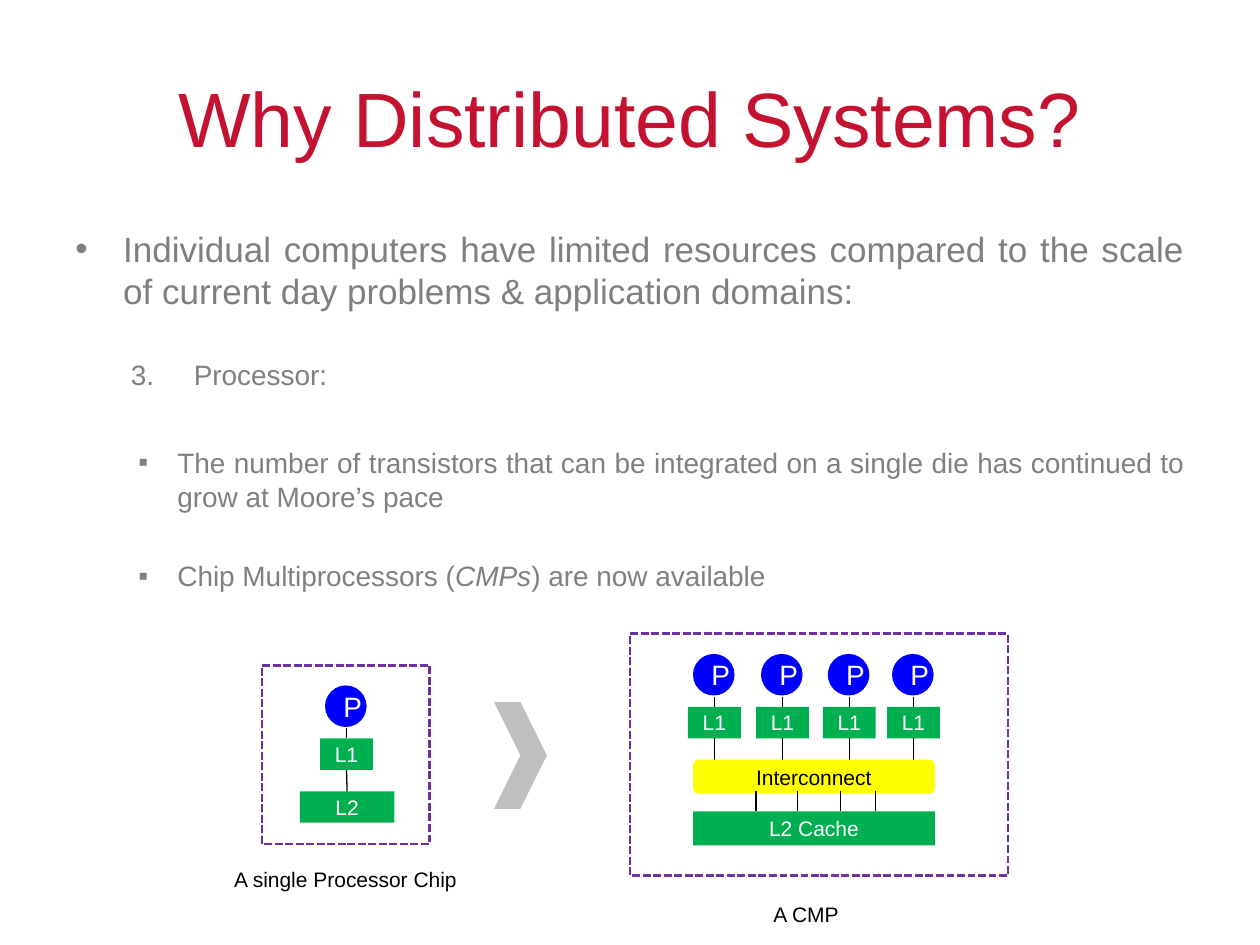
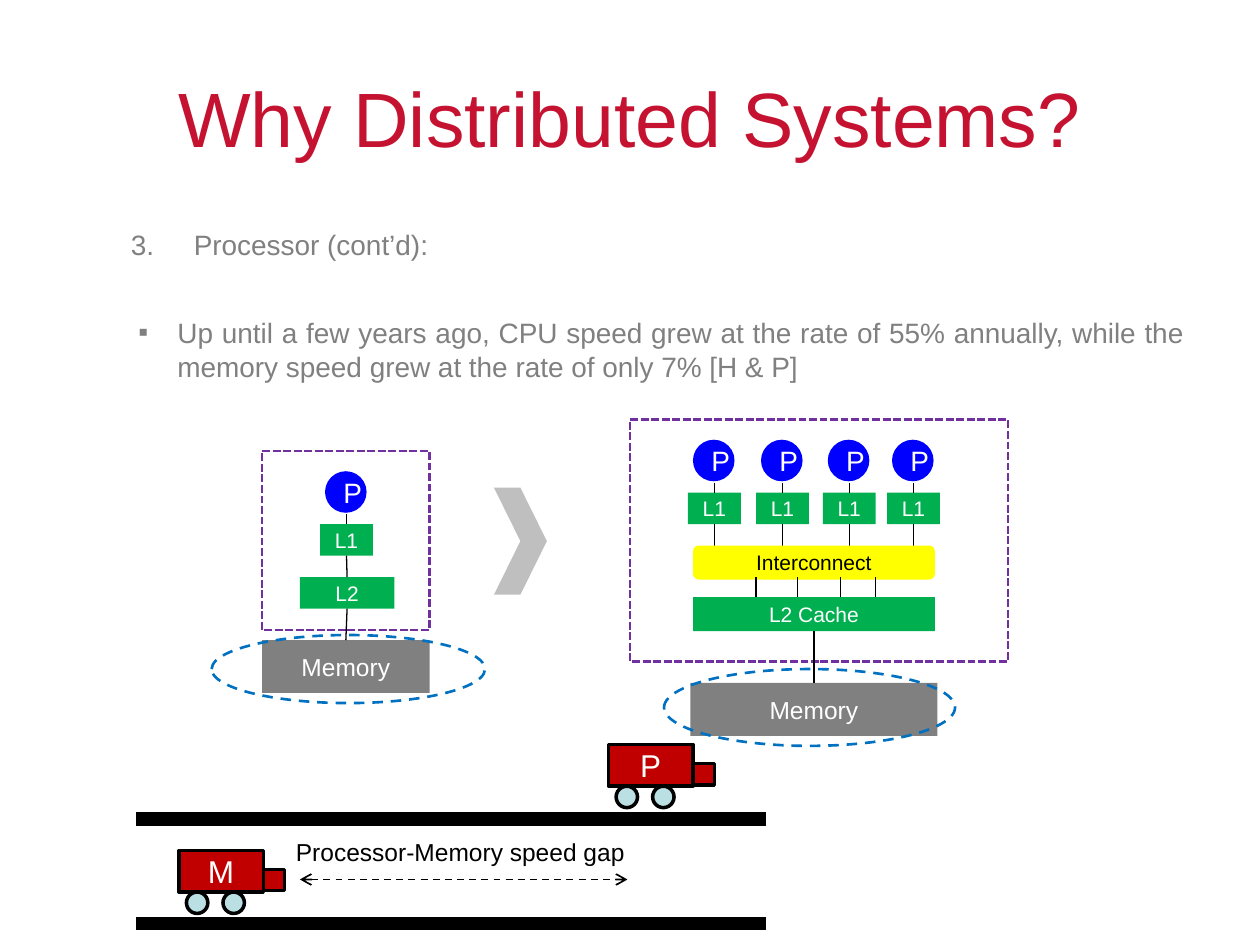
import lxml.etree
import pptx
import pptx.dml.color
import pptx.enum.dml
import pptx.enum.shapes
import pptx.enum.text
import pptx.oxml.ns
import pptx.util

PX = 9144
FACE = "Arial"
INK = {
    "title": "C41230", "body": "7F7F7F", "step": "808080", "black": "000000",
    "white": "FFFFFF", "chip": "7030A0", "core": "0000FF", "cache": "00B050",
    "net": "FFFF00", "memory": "808080", "ring": "0070C0", "arrow": "BFBFBF",
    "truck": "C00000", "wheel": "BBE0E3",
}
KIND = pptx.enum.shapes.MSO_SHAPE
DASH = pptx.enum.dml.MSO_LINE
ALIGN = pptx.enum.text.PP_ALIGN
MIDDLE = pptx.enum.text.MSO_ANCHOR.MIDDLE

POINT = {"left": 38, "hang": 38, "size": 20, "ink": "body", "mark": "•"}
STEP = {"left": 94, "hang": 50, "size": 16, "ink": "step", "mark": 3}
NOTE = {"left": 81, "hang": 31, "size": 16, "ink": "step", "mark": "▪"}


def px(*sizes):
    return [pptx.util.Emu(size * PX) for size in sizes]


def rgb(name):
    return pptx.dml.color.RGBColor.from_string(INK[name])


def put(item, form):
    for name, value in form.items():
        setattr(item, name, value)


def style(font, size, ink):
    put(font, {"name": FACE, "size": pptx.util.Pt(size)})
    font.color.rgb = rgb(ink)


def tag(owner, name, **attrs):
    return lxml.etree.SubElement(owner, pptx.oxml.ns.qn(name), **attrs)


def stroke(line, ink, width, dash=None):
    line.color.rgb = rgb(ink)
    put(line, {"width": pptx.util.Pt(width), "dash_style": dash})


def shape(slide, kind, box, fill=None, edge=None, text="", size=12, ink="white"):
    item = slide.shapes.add_shape(kind, *px(*box))
    item.shadow.inherit = False
    if fill:
        item.fill.solid()
        item.fill.fore_color.rgb = rgb(fill)
    else:
        item.fill.background()
    if edge:
        stroke(item.line, *edge)
    else:
        item.line.fill.background()
    if text:
        item.text_frame.vertical_anchor = MIDDLE
        para = item.text_frame.paragraphs[0]
        put(para, {"text": text, "alignment": ALIGN.CENTER})
        style(para.runs[0].font, size, ink)
    return item


def link(slide, ends, width=0.75, dash=None, start=None, stop=None, heads=()):
    line = slide.shapes.add_connector(
        pptx.enum.shapes.MSO_CONNECTOR.STRAIGHT, *px(*ends))
    stroke(line.line, "black", width, dash)
    for head in heads:
        tag(line.line._get_or_add_ln(), head, type="arrow")
    tag(line._element.spPr, "a:effectLst")
    if start:
        line.begin_connect(start, 2)
    if stop:
        line.end_connect(stop, 0)


def label(slide, box, text, size=12):
    frame = slide.shapes.add_textbox(*px(*box)).text_frame
    frame.word_wrap = False
    para = frame.paragraphs[0]
    para.text = text
    style(para.runs[0].font, size, "black")


def page(deck):
    slide = deck.slides.add_slide(deck.slide_layouts[5])
    title = slide.shapes.title
    put(title, dict(zip(("left", "top", "width", "height"), px(50, 30, 900, 125))))
    title.text_frame.vertical_anchor = MIDDLE
    para = title.text_frame.paragraphs[0]
    put(para, {"text": "Why Distributed Systems?", "alignment": ALIGN.CENTER})
    style(para.runs[0].font, 44, "title")
    return slide


def bullet(para, form):
    props = para._p.get_or_add_pPr()
    props.set("marL", str(form["left"] * PX))
    props.set("indent", str(-form["hang"] * PX))
    color = tag(props, "a:buClr")
    tag(color, "a:srgbClr", val=INK[form["ink"]])
    tag(props, "a:buFont", typeface=FACE)
    if isinstance(form["mark"], int):
        tag(props, "a:buAutoNum", type="arabicPeriod", startAt=str(form["mark"]))
    else:
        tag(props, "a:buChar", char=form["mark"])


def body(slide, height, items):
    frame = slide.shapes.add_textbox(*px(50, 175, 900, height)).text_frame
    frame.word_wrap = True
    for spot, (form, gap, *parts) in enumerate(items):
        para = frame.add_paragraph() if spot else frame.paragraphs[0]
        bullet(para, form)
        put(para, {"alignment": ALIGN.JUSTIFY, "space_before": pptx.util.Pt(gap),
                   "line_spacing": pptx.util.Pt(round(form["size"] * 1.21, 1))})
        for turn, text in enumerate(parts):
            run = para.add_run()
            put(run, {"text": text})
            style(run.font, form["size"], form["ink"])
            run.font.italic = turn % 2 == 1


def core(slide, mid, top):
    shape(slide, KIND.OVAL, (mid - 17, top + 16, 33, 33), "core", text="P", size=16)
    cache = shape(slide, KIND.RECTANGLE, (mid - 21, top + 58, 42, 25), "cache", text="L1")
    link(slide, (mid, top + 50, mid, top + 58), stop=cache)
    return cache


def frame(slide, box):
    shape(slide, KIND.RECTANGLE, box, edge=("chip", 1.5, DASH.SQUARE_DOT))


def single(slide, top):
    frame(slide, (208, top, 133, 142))
    first = core(slide, 275, top)
    last = shape(slide, KIND.RECTANGLE, (238, top + 100, 75, 25), "cache", text="L2")
    link(slide, (275, top + 83, 275, top + 100), start=first, stop=last)
    return last


def multi(slide, top):
    frame(slide, (500, top, 300, 192))
    for mid in (567, 621, 674, 725):
        cache = core(slide, mid, top)
        link(slide, (mid, top + 83, mid, top + 100), start=cache)
    shape(slide, KIND.ROUNDED_RECTANGLE, (550, top + 100, 192, 27), "net",
          text="Interconnect", ink="black")
    last = shape(slide, KIND.RECTANGLE, (550, top + 141, 192, 27), "cache", text="L2 Cache")
    for mid in (600, 633, 667, 695):
        link(slide, (mid, top + 125, mid, top + 141))
    return last


def chips(slide, top):
    shape(slide, KIND.CHEVRON, (392, top + 54, 42, 85), "arrow")
    return single(slide, top + 25), multi(slide, top)


def memory(slide, cache, box, ring):
    store = shape(slide, KIND.RECTANGLE, box, "memory", text="Memory", size=14)
    mid = box[0] + box[2] // 2
    link(slide, (mid, box[1] - 25, mid, box[1]), start=cache, stop=store)
    shape(slide, KIND.OVAL, ring, edge=("ring", 1.5, DASH.DASH))


def truck(slide, text, left, top):
    edge = ("black", 2)
    shape(slide, KIND.RECTANGLE, (left, top, 67, 33), "truck", edge, text, 18)
    for shift in (6, 35):
        shape(slide, KIND.OVAL, (left + shift, top + 33, 17, 17), "wheel", edge)
    shape(slide, KIND.RECTANGLE, (left + 67, top + 15, 17, 17), "truck", edge)


def growth(deck):
    slide = page(deck)
    body(slide, 150, [
        (POINT, 0, "Individual computers have limited resources compared to the scale "
                   "of current day problems & application domains:"),
        (STEP, 26, "Processor:"),
        (NOTE, 31, "The number of transistors that can be integrated on a single die "
                   "has continued to grow at Moore’s pace"),
        (NOTE, 26, "Chip Multiprocessors (", "CMPs", ") are now available"),
    ])
    chips(slide, 503)
    label(slide, (176, 683, 198, 30), "A single Processor Chip")
    label(slide, (604, 711, 73, 30), "A CMP")


def speed(deck):
    slide = page(deck)
    body(slide, 92, [
        (STEP, 0, "Processor (cont’d):"),
        (NOTE, 31, "Up until a few years ago, CPU speed grew at the rate of 55% annually, "
                   "while the memory speed grew at the rate of only 7% [H & P]"),
    ])
    one, many = chips(slide, 333)
    memory(slide, one, (208, 508, 133, 42), (168, 504, 217, 54))
    memory(slide, many, (548, 542, 196, 42), (527, 531, 231, 61))
    truck(slide, "P", 483, 591)
    truck(slide, "M", 142, 675)
    for road in (650, 733):
        link(slide, (108, road, 608, road), 7.75)
    link(slide, (238, 698, 498, 698), 1, DASH.DASH, heads=("a:headEnd", "a:tailEnd"))
    label(slide, (225, 659, 282, 34), "Processor-Memory speed gap", 14)


def main():
    deck = pptx.Presentation()
    put(deck, dict(zip(("slide_width", "slide_height"), px(1000, 750))))
    growth(deck)
    speed(deck)
    deck.save("out.pptx")


if __name__ == "__main__":
    main()
